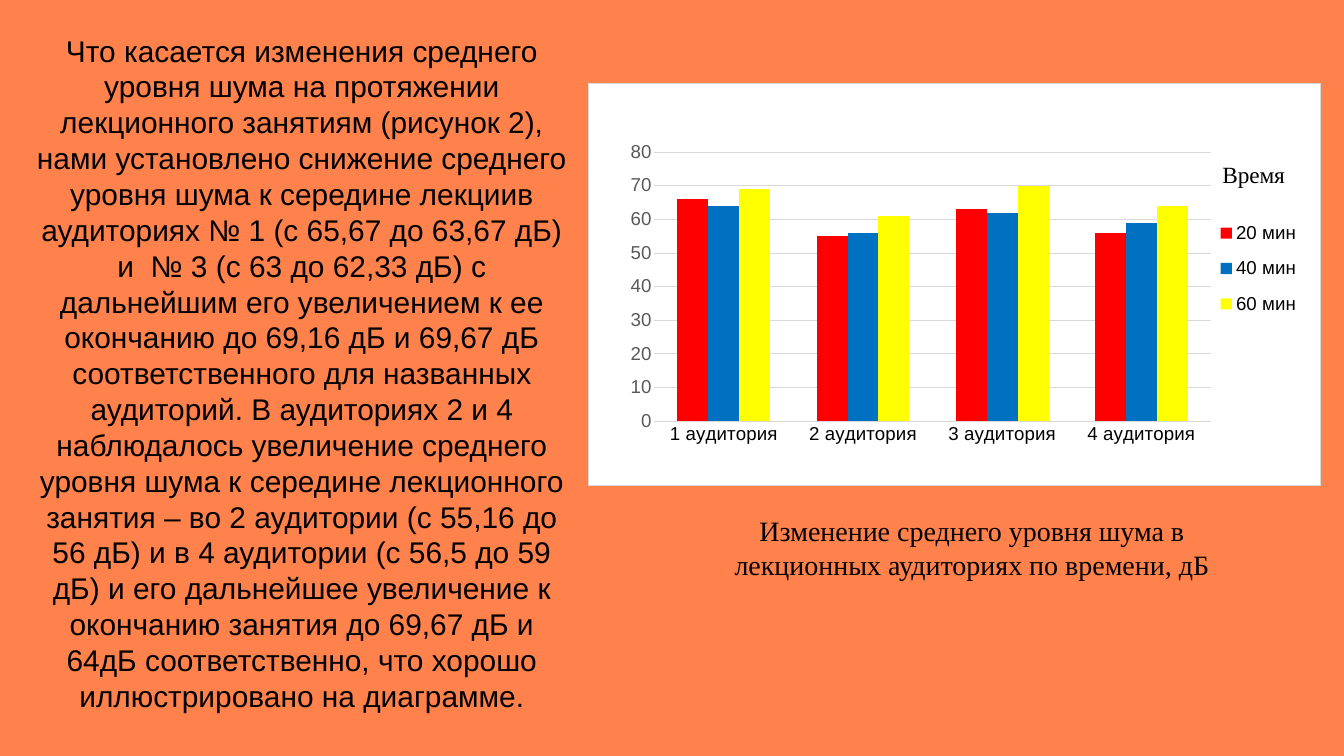
from lxml import etree
from pptx import Presentation
from pptx.chart.data import CategoryChartData
from pptx.dml.color import RGBColor
from pptx.enum.chart import XL_CHART_TYPE, XL_LEGEND_POSITION, XL_TICK_MARK
from pptx.enum.text import PP_ALIGN
from pptx.oxml import parse_xml
from pptx.oxml.ns import nsdecls, qn
from pptx.util import Inches, Pt

COLUMN = XL_CHART_TYPE.COLUMN_CLUSTERED
RIGHT = XL_LEGEND_POSITION.RIGHT
NO_TICK = XL_TICK_MARK.NONE
CENTER = PP_ALIGN.CENTER

ORANGE = RGBColor(0xFF, 0x81, 0x4B)
BLACK = RGBColor(0, 0, 0)
GRAY = RGBColor(0x59, 0x59, 0x59)
SILVER = RGBColor(0xD9, 0xD9, 0xD9)
WHITE = RGBColor(0xFF, 0xFF, 0xFF)
RED = RGBColor(0xFF, 0, 0)
BLUE = RGBColor(0, 0x70, 0xC0)
YELLOW = RGBColor(0xFF, 0xFF, 0)

SANS = "Arial"
SERIF = "Times New Roman"

BODY = (
    "Что касается изменения среднего уровня шума на протяжении "
    "лекционного занятиям (рисунок 2), нами установлено снижение среднего "
    "уровня шума к середине лекциив аудиториях № 1 (с 65,67 до 63,67 дБ) "
    "и  № 3 (с 63 до 62,33 дБ) с дальнейшим его увеличением к ее окончанию "
    "до 69,16 дБ и 69,67 дБ соответственного для названных аудиторий. "
    "В аудиториях 2 и 4 наблюдалось увеличение среднего уровня шума "
    "к середине лекционного занятия – во 2 аудитории (с 55,16 до 56 дБ) "
    "и в 4 аудитории (с 56,5 до 59 дБ) и его дальнейшее увеличение "
    "к окончанию занятия до 69,67 дБ и 64дБ соответственно, что хорошо "
    "иллюстрировано на диаграмме."
)
CAPTION = "Изменение среднего уровня шума в лекционных аудиториях по времени, дБ"
TITLE = "Время"
ROOMS = [f"{n} аудитория" for n in range(1, 5)]
SERIES = [
    ("20 мин", (66, 55, 63, 56), RED),
    ("40 мин", (64, 56, 62, 59), BLUE),
    ("60 мин", (69, 61, 70, 64), YELLOW),
]


def style(font, size, color=BLACK, face=SANS):
    font.size = Pt(size)
    font.name = face
    font.bold = False
    font.color.rgb = color


def add_text(slide, text, area, size, face, pitch, inset, after):
    box = slide.shapes.add_textbox(*map(Inches, area))
    frame = box.text_frame
    frame.word_wrap = True
    frame.margin_left = frame.margin_right = Inches(inset)
    frame.margin_top = frame.margin_bottom = Inches(inset)
    para = frame.paragraphs[0]
    para.alignment = CENTER
    para.line_spacing = Pt(pitch)
    para.space_after = Pt(after)
    run = para.add_run()
    run.text = text
    style(run.font, size, face=face)


def place(part, before, x, y, w=None, h=None, inner=False):
    for old in part.findall(qn("c:layout")):
        part.remove(old)
    layout = etree.Element(qn("c:layout"))
    manual = etree.SubElement(layout, qn("c:manualLayout"))
    rules = [("xMode", "edge"), ("yMode", "edge"),
             ("x", x), ("y", y), ("w", w), ("h", h)]
    if inner:
        rules.insert(0, ("layoutTarget", "inner"))
    for tag, val in rules:
        if val is not None:
            etree.SubElement(manual, qn(f"c:{tag}")).set("val", str(val))
    if before is None:
        part.insert(0, layout)
    else:
        part.find(qn(before)).addnext(layout)


def add_chart(slide):
    data = CategoryChartData()
    data.categories = ROOMS
    for name, vals, _ in SERIES:
        data.add_series(name, vals)
    area = map(Inches, (8.75, 1.24, 10.91, 5.99))
    chart = slide.shapes.add_chart(COLUMN, *area, data).chart
    style(chart.font, 10)

    plot = chart.plots[0]
    plot.gap_width = 150
    plot.overlap = 0
    plot.vary_by_categories = False
    for bars, (_, _, color) in zip(plot.series, SERIES):
        bars.format.fill.solid()
        bars.format.fill.fore_color.rgb = color

    rooms, level = chart.category_axis, chart.value_axis
    for axis, color in ((rooms, BLACK), (level, GRAY)):
        axis.major_tick_mark = axis.minor_tick_mark = NO_TICK
        axis.format.line.fill.background()
        style(axis.tick_labels.font, 20, color)
    level.minimum_scale, level.maximum_scale = 0, 80
    level.major_unit = 10
    level.tick_labels.number_format = "General"
    level.tick_labels.number_format_is_linked = False
    grid = level.major_gridlines.format.line
    grid.color.rgb = SILVER
    grid.width = Pt(0.75)

    chart.has_title = True
    title = chart.chart_title
    run = title.text_frame.paragraphs[0].add_run()
    run.text = TITLE
    style(run.font, 25, face=SERIF)
    title.include_in_layout = True

    chart.has_legend = True
    legend = chart.legend
    legend.position = RIGHT
    legend.include_in_layout = False
    style(legend.font, 20)

    root = chart.element.find(qn("c:chart"))
    place(root.find(qn("c:title")), "c:tx", 0.86, 0.18)
    place(root.find(qn("c:legend")), "c:legendPos", 0.86, 0.31, 0.11, 0.3)
    place(root.find(qn("c:plotArea")), None, 0.09, 0.17, 0.76, 0.67, True)
    root.addnext(parse_xml(
        f'<c:spPr {nsdecls("c", "a")}>'
        f'<a:solidFill><a:srgbClr val="{WHITE}"/></a:solidFill>'
        f'<a:ln w="{Pt(0.75)}"><a:solidFill><a:srgbClr val="{SILVER}"/>'
        '</a:solidFill></a:ln></c:spPr>'))


def main():
    deck = Presentation()
    deck.slide_width, deck.slide_height = Inches(20), Inches(11.25)
    slide = deck.slides.add_slide(deck.slide_layouts[6])
    slide.background.fill.solid()
    slide.background.fill.fore_color.rgb = ORANGE
    add_text(slide, BODY, (0.48, 0.48, 8.03, 10.23), 32, SANS, 38.4, 0, 0)
    add_text(slide, CAPTION, (10.41, 7.54, 8.11, 1.25), 30, SERIF, 36.4, 0.1, 3)
    add_chart(slide)
    deck.save("out.pptx")


if __name__ == "__main__":
    main()
